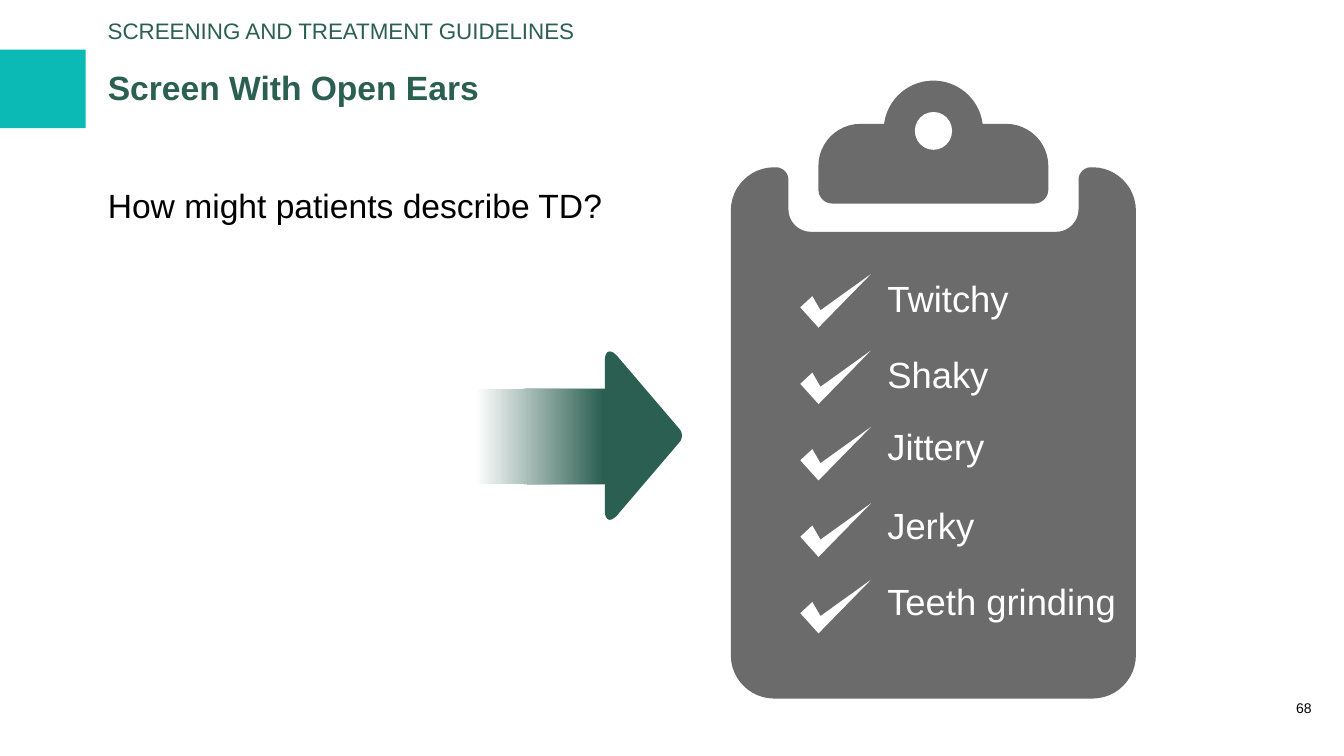
from dataclasses import dataclass
from typing import NamedTuple

from pptx import Presentation
from pptx.dml.color import RGBColor
from pptx.enum import shapes, text
from pptx.util import Pt


@dataclass(frozen=True)
class Theme:
    font: str = "Arial"
    teal: str = "0BBAB4"
    green: str = "2B5F51"
    gray: str = "6B6B6B"
    white: str = "FFFFFF"
    black: str = "000000"
    heading: float = 24
    eyebrow: float = 16
    label: float = 26
    number: float = 10


class Box(NamedTuple):
    left: float
    top: float
    width: float
    height: float


class Corner(NamedTuple):
    x: float
    y: float
    cut: float = 0


class Symptom(NamedTuple):
    name: str
    top: float
    width: float = 106


THEME = Theme()
CURVE_STEPS = 12
CURVE_PULL = 0.55
TICK_LEFT, TICK_TOP, TICK_PITCH = 571.7, 195.8, 54.6
TICK = [Corner(0, 23.8), Corner(8.6, 15.8), Corner(14.4, 25.9),
        Corner(50.4, 0), Corner(13, 38.2)]
SYMPTOMS = [
    Symptom("Twitchy", 193.7),
    Symptom("Shaky", 247.7),
    Symptom("Jittery", 299.5),
    Symptom("Jerky", 355.7),
    Symptom("Teeth grinding", 410.4, 185),
]
BOARD = [
    Corner(522, 119.5, 31), Corner(563.2, 119.5, 9),
    Corner(563.2, 165.6, 16), Corner(770.4, 165.6, 16),
    Corner(770.4, 119.5, 9), Corner(811.4, 119.5, 31),
    Corner(811.4, 499, 31), Corner(522, 499, 31),
]
CLIP = [
    Corner(584.6, 88.5, 30), Corner(748.8, 88.5, 30),
    Corner(748.8, 145.4, 10), Corner(584.6, 145.4, 10),
]
ARROW = [
    Corner(365.8, 333.6), Corner(365.8, 289.4), Corner(432, 289.4),
    Corner(432, 244, 14), Corner(489.4, 311.2, 6), Corner(432, 378.4, 14),
    Corner(432, 333.6),
]


def paint(shape, color: str) -> None:
    shape.fill.solid()
    shape.fill.fore_color.rgb = RGBColor.from_string(color)
    shape.line.fill.background()
    shape.shadow.inherit = False


def add_preset(page, kind, box: Box, color: str):
    shape = page.shapes.add_shape(kind, *map(Pt, box))
    paint(shape, color)
    return shape


def toward(start: Corner, goal: Corner) -> tuple[float, float]:
    dx, dy = goal.x - start.x, goal.y - start.y
    length = (dx * dx + dy * dy) ** 0.5
    share = start.cut / length
    return start.x + dx * share, start.y + dy * share


def bend(corner: Corner, before: Corner, after: Corner) -> list[tuple[float, float]]:
    if not corner.cut:
        return [(corner.x, corner.y)]
    vertex = (corner.x, corner.y)
    first, last = toward(corner, before), toward(corner, after)
    points = []
    for step in range(CURVE_STEPS + 1):
        t = step / CURVE_STEPS
        s = 1 - t
        near, far = 3 * s * s * t, 3 * s * t * t
        points.append(tuple(
            s ** 3 * a + near * (a + CURVE_PULL * (v - a))
            + far * (b + CURVE_PULL * (v - b)) + t ** 3 * b
            for a, v, b in zip(first, vertex, last)))
    return points


def add_outline(page, corners: list[Corner], color: str,
                left: float = 0, top: float = 0):
    points = []
    for i, corner in enumerate(corners):
        points += bend(corner, corners[i - 1], corners[(i + 1) % len(corners)])
    points = [(Pt(left + x), Pt(top + y)) for x, y in points]
    builder = page.shapes.build_freeform(*points[0], scale=1.0)
    builder.add_line_segments(points[1:], close=True)
    shape = builder.convert_to_shape()
    paint(shape, color)
    return shape


def write(shape, words: str, *, size: float, color: str, bold: bool = False,
          anchor=text.MSO_ANCHOR.TOP, align=text.PP_ALIGN.LEFT,
          spacing: float = 0.95, inset: tuple[float, float] = (0, 0)) -> None:
    frame = shape.text_frame
    frame.word_wrap = True
    frame.auto_size = text.MSO_AUTO_SIZE.NONE
    frame.vertical_anchor = anchor
    frame.margin_left = frame.margin_right = Pt(inset[0])
    frame.margin_top = frame.margin_bottom = Pt(inset[1])
    para = frame.paragraphs[0]
    para.alignment = align
    para.line_spacing = spacing
    span = para.add_run()
    span.text = words
    span.font.name = THEME.font
    span.font.size = Pt(size)
    span.font.bold = bold
    span.font.color.rgb = RGBColor.from_string(color)


def add_text(page, box: Box, words: str, **style) -> None:
    write(page.shapes.add_textbox(*map(Pt, box)), words, **style)


def add_heading(page) -> None:
    add_preset(page, shapes.MSO_SHAPE.RECTANGLE, Box(0, 35.5, 61.2, 56), THEME.teal)
    title = page.shapes.title
    title.left, title.top, title.width, title.height = map(
        Pt, Box(77, 28, 710, 71.3))
    write(title, "Screen With Open Ears", size=THEME.heading, color=THEME.green,
          bold=True, anchor=text.MSO_ANCHOR.MIDDLE)
    add_text(page, Box(77, 13, 738.7, 20), "SCREENING AND TREATMENT GUIDELINES",
             size=THEME.eyebrow, color=THEME.green, anchor=text.MSO_ANCHOR.MIDDLE)
    add_text(page, Box(77, 134, 430, 33), "How might patients describe TD?",
             size=THEME.heading, color=THEME.black)
    add_text(page, Box(919.4, 481, 23.8, 31), "68", size=THEME.number,
             color=THEME.black, anchor=text.MSO_ANCHOR.BOTTOM,
             align=text.PP_ALIGN.CENTER)


def add_arrow(page) -> None:
    add_outline(page, ARROW, THEME.green)
    for box in (Box(357.8, 263.5, 68.4, 96.5), Box(337.7, 244.8, 68.4, 133.9)):
        shaft = add_preset(page, shapes.MSO_SHAPE.ROUND_2_SAME_RECTANGLE,
                           box, THEME.green)
        shaft.rotation = 270
        shaft.adjustments[0], shaft.adjustments[1] = 0.5, 0
    shaft.fill.gradient()
    shaft.fill.gradient_angle = 270
    fade = ((0.26, THEME.white), (0.94, THEME.green))
    for stop, (position, color) in zip(shaft.fill.gradient_stops, fade):
        stop.position = position
        stop.color.rgb = RGBColor.from_string(color)


def add_clipboard(page) -> None:
    oval = shapes.MSO_SHAPE.OVAL
    add_outline(page, BOARD, THEME.gray)
    add_outline(page, CLIP, THEME.gray)
    add_preset(page, oval, Box(631.2, 57.6, 71, 71), THEME.gray)
    add_preset(page, oval, Box(653.5, 80, 26.6, 27), THEME.white)
    for row, symptom in enumerate(SYMPTOMS):
        add_outline(page, TICK, THEME.white, TICK_LEFT, TICK_TOP + row * TICK_PITCH)
        add_text(page, Box(626.7, symptom.top, symptom.width, 39), symptom.name,
                 size=THEME.label, color=THEME.white, spacing=1, inset=(7.2, 3.6))


def main() -> None:
    deck = Presentation()
    deck.slide_width, deck.slide_height = Pt(960), Pt(540)
    page = deck.slides.add_slide(deck.slide_layouts[5])
    add_heading(page)
    add_arrow(page)
    add_clipboard(page)
    deck.save("out.pptx")


if __name__ == "__main__":
    main()
